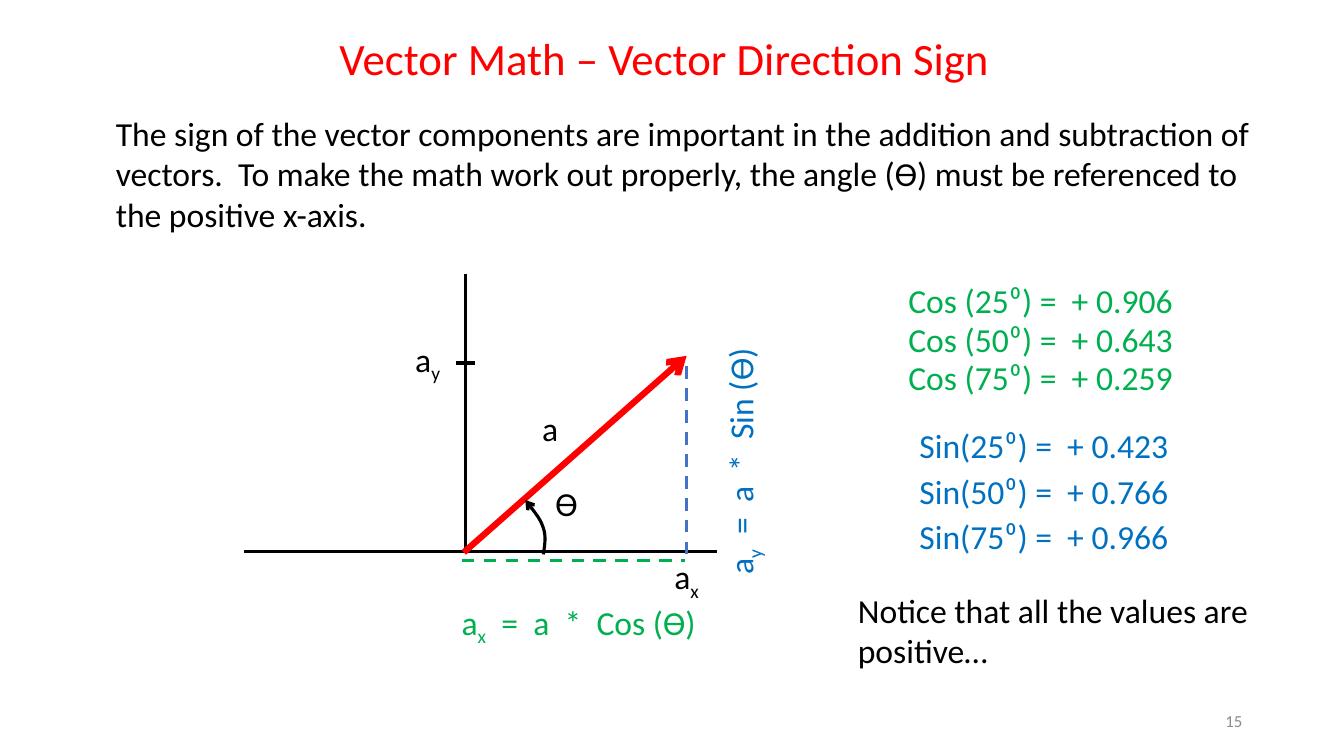
from lxml.etree import SubElement
from pptx import Presentation
from pptx.dml.color import RGBColor
from pptx.enum.dml import MSO_LINE
from pptx.enum.shapes import MSO_CONNECTOR
from pptx.enum.text import MSO_ANCHOR, MSO_AUTO_SIZE, PP_ALIGN
from pptx.oxml.ns import qn
from pptx.util import Inches, Pt

COLORS = {
    "title": "FF0000",
    "text": "000000",
    "vector": "FF0000",
    "cosine": "00B050",
    "sine": "0070C0",
    "height": "4472C4",
    "number": "8C8C8C",
}


def rgb(name):
    return RGBColor.from_string(COLORS[name])


def add_text(slide, box, parts, color="text", size=24, align=PP_ALIGN.LEFT,
             anchor=MSO_ANCHOR.TOP, auto_size=MSO_AUTO_SIZE.SHAPE_TO_FIT_TEXT):
    """Place one paragraph; every second string in parts is a subscript."""
    label = slide.shapes.add_textbox(*map(Inches, box))
    frame_format = {"word_wrap": True, "auto_size": auto_size,
                    "vertical_anchor": anchor}
    for name, value in frame_format.items():
        setattr(label.text_frame, name, value)
    paragraph = label.text_frame.paragraphs[0]
    paragraph.alignment = align
    for index, part in enumerate(parts):
        run = paragraph.add_run()
        run.text = part
        for name, value in {"name": "Calibri", "size": Pt(size)}.items():
            setattr(run.font, name, value)
        run.font.color.rgb = rgb(color)
        if index % 2:
            run._r.get_or_add_rPr().set("baseline", "-25000")
    return label


def style_line(stroke, color, width, dash=None, arrow=False):
    stroke.line.color.rgb = rgb(color)
    stroke.line.width = Pt(width)
    if dash:
        stroke.line.dash_style = dash
    if arrow:
        outline = stroke.element.spPr.find(qn("a:ln"))
        SubElement(outline, qn("a:tailEnd"), type="arrow")


def add_line(slide, start, end, color="text", width=2.25, **style):
    segment = slide.shapes.add_connector(
        MSO_CONNECTOR.STRAIGHT, *map(Inches, (*start, *end)))
    style_line(segment, color, width, **style)
    SubElement(segment.element.spPr, qn("a:effectLst"))


def add_angle_arc(slide, points):
    """Draw an open cubic curve: a start point, then three points per piece."""
    start, *controls = [(Inches(x), Inches(y)) for x, y in points]
    builder = slide.shapes.build_freeform(*start)
    builder.add_line_segments(controls, close=False)
    arc = builder.convert_to_shape()
    arc.fill.background()
    arc.shadow.inherit = False
    style_line(arc, "text", 2.25, arrow=True)
    outline = next(arc.element.iter(qn("a:path")))
    straight = outline.findall(qn("a:lnTo"))
    for first in range(0, len(straight), 3):
        curve = SubElement(outline, qn("a:cubicBezTo"))
        for piece in straight[first:first + 3]:
            curve.append(piece[0])
            outline.remove(piece)


def add_vector_diagram(slide, origin_x, origin_y):
    """Draw the axes, the vector and its components around the origin."""
    def at(x, y):
        return origin_x + x, origin_y + y

    add_line(slide, at(0, -2.75), at(0, 0))
    add_line(slide, at(2.49, 0), at(-2.2, 0))
    add_line(slide, at(-0.1, -1.87), at(0.09, -1.87), width=3)
    add_line(slide, at(-0.02, 0.01), at(2.19, -1.94), "vector", 4.5, arrow=True)
    add_line(slide, at(-0.04, 0.09), at(2.17, 0.09), "cosine", dash=MSO_LINE.DASH)
    add_line(slide, at(2.19, 0.03), at(2.19, -1.86), "height", dash=MSO_LINE.DASH)
    add_angle_arc(slide, [at(0.77, 0.03),
                          at(0.78, -0.05), at(0.8, -0.14), at(0.77, -0.23),
                          at(0.74, -0.32), at(0.66, -0.42), at(0.59, -0.51)])

    labels = [
        (0.79, -0.73, 0.45, 0.5, ["ϴ"]),
        (0.66, -1.47, 0.53, 0.66, ["a"]),
        (1.97, 0, 0.83, 0.66, ["a", "x"]),
        (-0.6, -2.16, 0.83, 0.66, ["a", "y"]),
    ]
    for x, y, width, height, parts in labels:
        add_text(slide, (*at(x, y), width, height), parts)
    add_text(slide, (*at(-0.14, 0.45), 3.42, 0.5),
             ["a", "x", "  =  a  *  Cos (ϴ)"], "cosine")
    y_component = add_text(slide, (*at(1.29, -1.35), 2.86, 0.5),
                           ["a", "y", "  =  a  *  Sin (ϴ)"], "sine")
    y_component.rotation = 270


def add_values(slide, left, top, pitch, function, values, color):
    """List the function's value at 25, 50 and 75 degrees."""
    for row, (angle, value) in enumerate(zip((25, 50, 75), values)):
        add_text(slide, (left, top + row * pitch, 3.42, 0.5),
                 [f"{function}({angle}⁰) =  + {value}"], color)


def add_heading(slide):
    add_text(slide, (3.24, 0.26, 6.7, 0.64),
             ["Vector Math – Vector Direction Sign"],
             "title", 32, PP_ALIGN.CENTER)
    add_text(slide, (1.05, 1.07, 11.55, 1.31), [
        "The sign of the vector components are important in the addition and "
        "subtraction of vectors.  To make the math work out properly, the "
        "angle (ϴ) must be referenced to the positive x-axis."])


def main():
    deck = Presentation()
    deck.slide_width, deck.slide_height = Inches(13.33), Inches(7.5)
    slide = deck.slides.add_slide(deck.slide_layouts[6])
    add_heading(slide)
    add_vector_diagram(slide, 4.62, 5.47)
    add_values(slide, 8.91, 2.73, 0.38, "Cos ",
               ("0.906", "0.643", "0.259"), "cosine")
    add_values(slide, 9.02, 4.17, 0.45, "Sin",
               ("0.423", "0.766", "0.966"), "sine")
    add_text(slide, (8.41, 5.8, 4.19, 0.91),
             ["Notice that all the values are positive…"])
    add_text(slide, (9.42, 6.95, 3, 0.4), ["15"], "number", 12,
             PP_ALIGN.RIGHT, MSO_ANCHOR.MIDDLE, MSO_AUTO_SIZE.NONE)
    deck.save("out.pptx")


if __name__ == "__main__":
    main()
